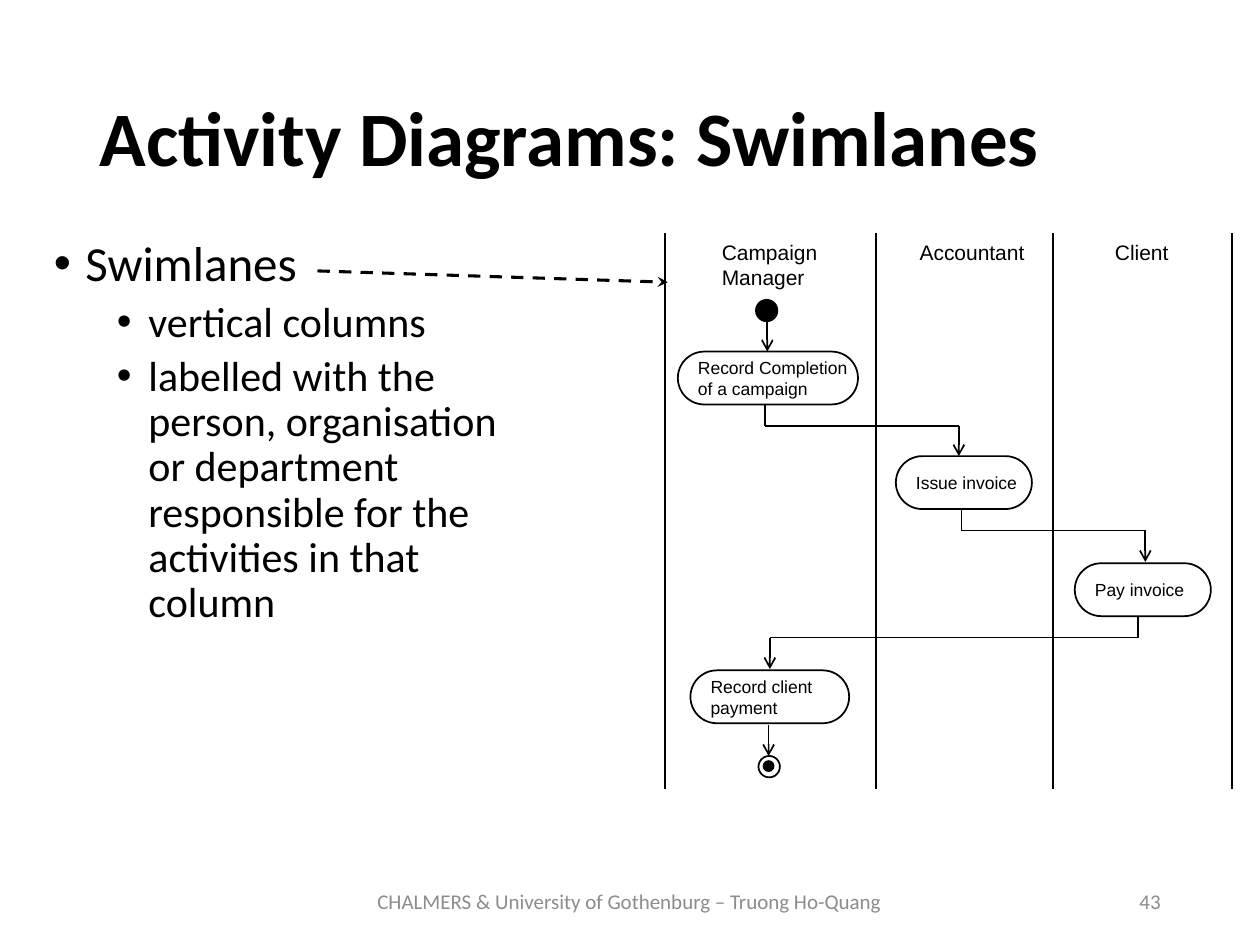
from lxml import etree
from pptx import Presentation
from pptx.dml.color import RGBColor
from pptx.enum.dml import MSO_LINE
from pptx.enum.shapes import MSO_CONNECTOR, MSO_SHAPE
from pptx.enum.text import MSO_ANCHOR, MSO_AUTO_SIZE, PP_ALIGN
from pptx.oxml.ns import qn
from pptx.util import Inches, Pt

STRAIGHT = MSO_CONNECTOR.STRAIGHT
ROUNDED, OVAL = MSO_SHAPE.ROUNDED_RECTANGLE, MSO_SHAPE.OVAL
DASH = MSO_LINE.DASH
TOP, MIDDLE = MSO_ANCHOR.TOP, MSO_ANCHOR.MIDDLE
GROW = MSO_AUTO_SIZE.SHAPE_TO_FIT_TEXT
LEFT, CENTER, RIGHT = PP_ALIGN.LEFT, PP_ALIGN.CENTER, PP_ALIGN.RIGHT

COLORS = {"ink": "000000", "paper": "FFFFFF", "footer": "8C8C8C"}
TITLE = "Activity Diagrams: Swimlanes"
FOOTERS = [
    ("43", (7.06, 6.95, 2.25, 0.4), RIGHT),
    ("CHALMERS & University of Gothenburg – Truong Ho-Quang", (2.72, 6.95, 4.55, 0.4), CENTER),
]
# text, level, size, left margin, space before
BULLETS = [
    ("Swimlanes", 0, 28, 0.25, 0),
    ("vertical columns", 1, 24, 0.75, 5),
    ("labelled with the\nperson, organisation\nor department\nresponsible for the\nactivities in that\ncolumn", 1, 24, 0.75, 5),
]
LANE_TOP, LANE_BOTTOM = 1.85, 6.26
LANE_EDGES = [5.28, 6.95, 8.36, 9.78]
LANE_LABELS = [
    ("Campaign\nManager", 5.63, 0.98, 0.5),
    ("Accountant", 7.2, 1.06, 0.3),
    ("Client", 8.75, 0.65, 0.3),
]
ACTIVITY_HEIGHT = 0.42
ACTIVITIES = [
    (["Record Completion", "of a campaign"], 5.38, 2.79, 1.43),
    (["Issue invoice"], 7.11, 3.62, 1.08),
    (["Pay invoice"], 8.53, 4.47, 1.08),
    (["Record client", "payment"], 5.48, 5.32, 1.26),
]
NODES = [
    (6.0, 2.38, 0.17, "ink"),
    (6.02, 6.0, 0.17, "paper"),
    (6.06, 6.04, 0.08, "ink"),
]
# start x, start y, bend y, end x, end y
FLOWS = [
    (6.07, 3.21, 3.38, 7.61, 3.62),
    (7.63, 4.04, 4.21, 9.09, 4.46),
    (9.03, 4.89, 5.06, 6.11, 5.31),
]
DROPS = [(6.09, 2.54, 2.79), (6.1, 5.75, 6.0)]


def color(name):
    return RGBColor.from_string(COLORS[name])


def write(frame, paragraphs, *, size, font="Calibri", ink="ink", bold=False,
          align=LEFT, anchor=TOP, wrap=True, spacing=None):
    frame.word_wrap = wrap
    frame.vertical_anchor = anchor
    for index, text in enumerate(paragraphs):
        paragraph = frame.paragraphs[0] if index == 0 else frame.add_paragraph()
        paragraph.text = text
        paragraph.alignment = align
        if spacing:
            paragraph.line_spacing = spacing
        paragraph.font.size = Pt(size)
        paragraph.font.name = font
        paragraph.font.bold = bold
        paragraph.font.color.rgb = color(ink)


def add_text(slide, box, paragraphs, **style):
    shape = slide.shapes.add_textbox(*map(Inches, box))
    write(shape.text_frame, paragraphs, **style)
    return shape


def add_bullets(slide, box):
    frame = add_text(slide, box, [text for text, *_ in BULLETS], size=24, spacing=0.9).text_frame
    for paragraph, (_, level, size, margin, before) in zip(frame.paragraphs, BULLETS):
        paragraph.level = level
        paragraph.space_before = Pt(before)
        properties = paragraph._p.get_or_add_pPr()
        properties.set("marL", str(Inches(margin)))
        properties.set("indent", str(Inches(-0.25)))
        bullet_font = etree.Element(qn("a:buFont"), typeface="Arial")
        bullet = etree.Element(qn("a:buChar"), char="•")
        default_run = properties.find(qn("a:defRPr"))
        default_run.addprevious(bullet_font)
        default_run.addprevious(bullet)
        paragraph.font.size = Pt(size)


def add_line(slide, start, end, head=None, width=1, dash=None):
    connector = slide.shapes.add_connector(STRAIGHT, *map(Inches, (*start, *end)))
    connector.line.color.rgb = color("ink")
    connector.line.width = Pt(width)
    if dash:
        connector.line.dash_style = dash
    if head:
        etree.SubElement(connector.line._get_or_add_ln(), qn("a:tailEnd"), type=head)
    etree.SubElement(connector._element.spPr, qn("a:effectLst"))


def add_outlined(slide, kind, box, fill):
    shape = slide.shapes.add_shape(kind, *map(Inches, box))
    shape.shadow.inherit = False
    shape.fill.solid()
    shape.fill.fore_color.rgb = color(fill)
    shape.line.color.rgb = color("ink")
    shape.line.width = Pt(1)
    return shape


def main():
    """Build the swimlane activity diagram slide."""
    presentation = Presentation()
    presentation.slide_width, presentation.slide_height = Inches(10), Inches(7.5)
    slide = presentation.slides.add_slide(presentation.slide_layouts[5])

    title = slide.shapes.title
    title.left, title.top, title.width, title.height = map(Inches, (0.69, 0.4, 8.62, 1.45))
    write(title.text_frame, [TITLE], size=44, bold=True, anchor=MIDDLE, spacing=0.9)
    for text, box, align in FOOTERS:
        add_text(slide, box, [text], size=12, ink="footer", align=align, anchor=MIDDLE)
    add_bullets(slide, (0.33, 1.85, 8.5, 4.5))

    for edge in LANE_EDGES:
        add_line(slide, (edge, LANE_TOP), (edge, LANE_BOTTOM))
    for text, left, width, height in LANE_LABELS:
        label = add_text(slide, (left, LANE_TOP, width, height), [text],
                         size=12, font="Arial", wrap=False)
        label.text_frame.auto_size = GROW
    for lines, left, top, width in ACTIVITIES:
        activity = add_outlined(slide, ROUNDED, (left, top, width, ACTIVITY_HEIGHT), "paper")
        activity.adjustments[0] = 0.5
        write(activity.text_frame, lines, size=10, font="Arial", anchor=MIDDLE, wrap=False)
    for left, top, diameter, fill in NODES:
        add_outlined(slide, OVAL, (left, top, diameter, diameter), fill)

    for start_x, start_y, bend_y, end_x, end_y in FLOWS:
        add_line(slide, (start_x, start_y), (start_x, bend_y))
        add_line(slide, (start_x, bend_y), (end_x, bend_y))
        add_line(slide, (end_x, bend_y), (end_x, end_y), head="arrow")
    for x, top, bottom in DROPS:
        add_line(slide, (x, top), (x, bottom), head="arrow")
    add_line(slide, (2.52, 2.15), (5.3, 2.24), head="stealth", width=1.75, dash=DASH)

    presentation.save("out.pptx")


if __name__ == "__main__":
    main()
